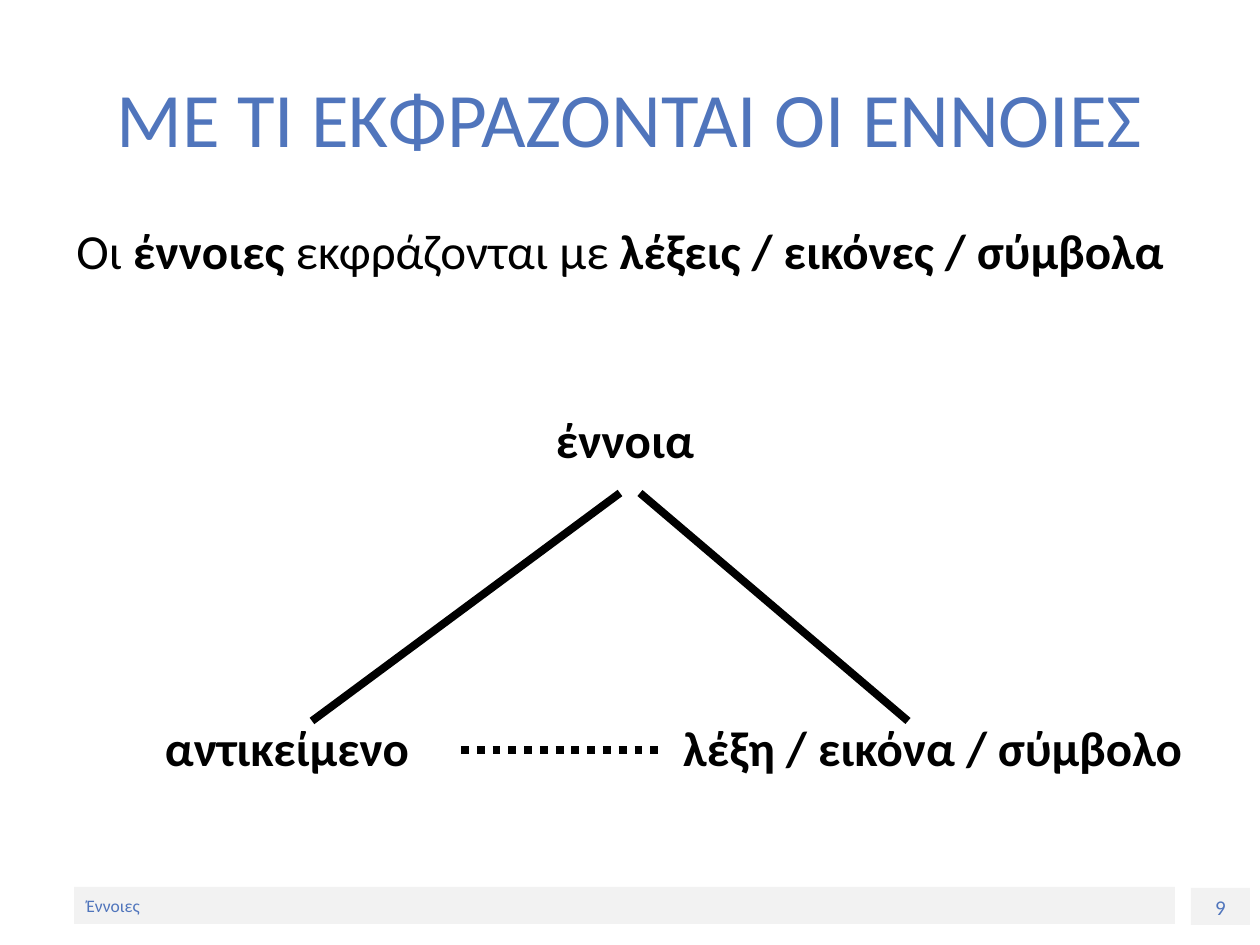
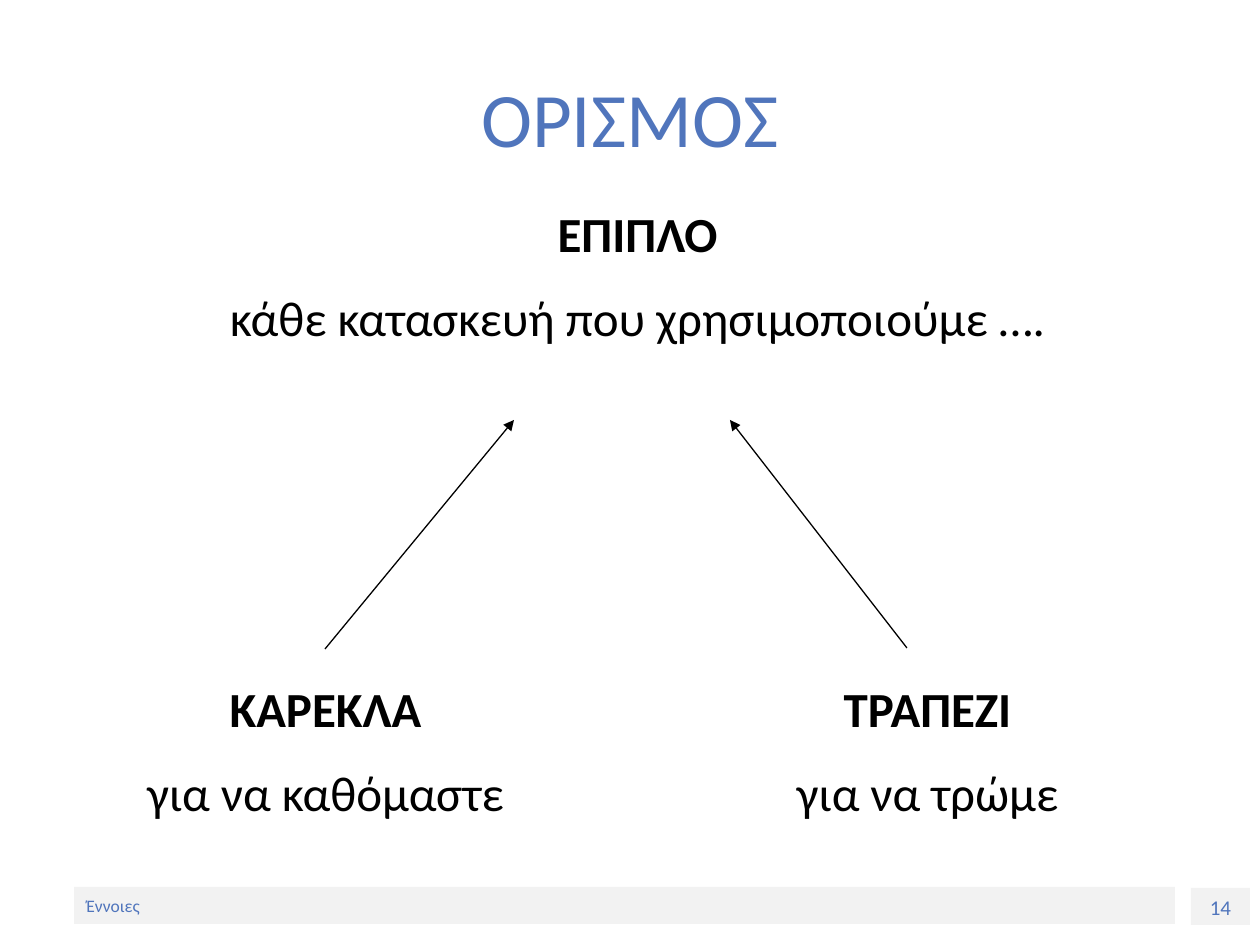
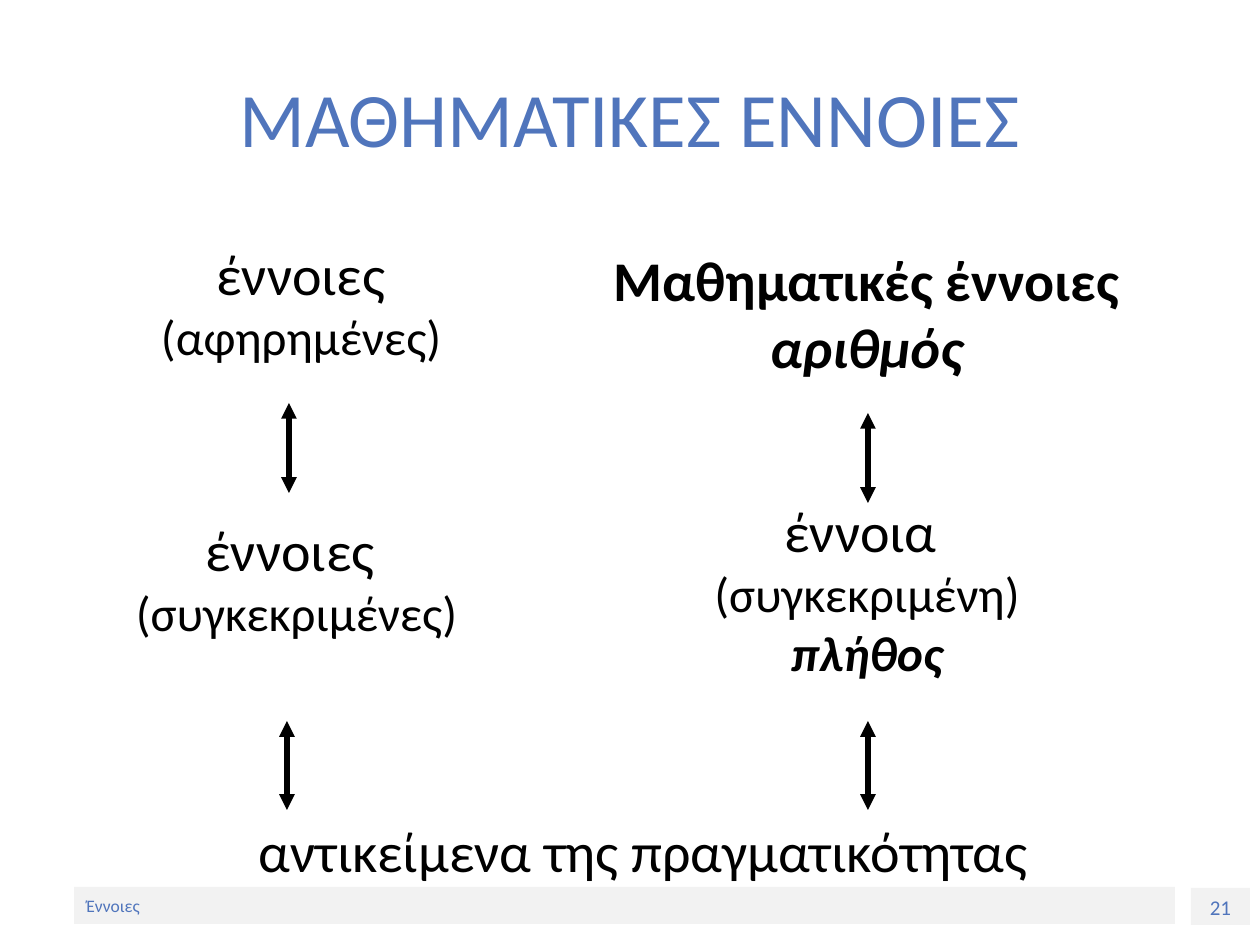
from lxml import etree
from pptx import Presentation
from pptx.dml.color import RGBColor
from pptx.enum import dml, shapes, text
from pptx.oxml import ns
from pptx import util as u

rgb = RGBColor.from_string
BLUE, GREY, BLACK = "5075BC", "F2F2F2", "000000"
CENTER, LEFT = text.PP_ALIGN.CENTER, text.PP_ALIGN.LEFT
TOP, MIDDLE = text.MSO_ANCHOR.TOP, text.MSO_ANCHOR.MIDDLE
BOLD = {"bold": True}
ITALIC = {"bold": True, "italic": True}


def px(n):
    return u.Emu(round(n * 914400 / 126))


def write(sp, paras, size=28, color=BLACK, align=CENTER, anchor=TOP):
    tf = sp.text_frame
    tf.word_wrap = True
    tf.vertical_anchor = anchor
    for i, lines in enumerate(paras):
        p = tf.paragraphs[0] if i == 0 else tf.add_paragraph()
        p.alignment = align
        p.space_before = u.Pt(14 if i else 0)
        for j, line in enumerate(lines):
            if j:
                p.add_line_break()
            for words, fmt in line:
                r = p.add_run()
                r.text = words
                r.font.color.rgb = rgb(color)
                values = {"name": "Calibri", "size": size, "bold": False} | fmt
                values["size"] = u.Pt(values["size"])
                for key, value in values.items():
                    setattr(r.font, key, value)


big = {"size": 32}
slides = [
    {
        "number": "9",
        "title": "ΜΕ ΤΙ ΕΚΦΡΑΖΟΝΤΑΙ ΟΙ ΕΝΝΟΙΕΣ",
        "anchor": TOP,
        "texts": [
            ((64, 214, 1134, 624), LEFT, [[[
                ("Οι ", {}), ("έννοιες", BOLD), (" εκφράζονται με ", {}),
                ("λέξεις / εικόνες / σύμβολα", BOLD)]]]),
            ((461, 403, 328, 72), CENTER, [[[("έννοια", BOLD)]]]),
            ((630, 711, 605, 72), CENTER, [[[("λέξη / εικόνα / σύμβολο", BOLD)]]]),
            ((123, 711, 328, 72), CENTER, [[[("αντικείμενο", BOLD)]]]),
        ],
        "width": 4.5,
        "ends": [],
        "lines": [
            ((620, 493, 312, 721), None),
            ((640, 493, 908, 721), None),
            ((461, 750, 660, 750), dml.MSO_LINE.ROUND_DOT),
        ],
    },
    {
        "number": "14",
        "title": "ΟΡΙΣΜΟΣ",
        "anchor": MIDDLE,
        "texts": [
            ((67, 670, 517, 160), CENTER, [[[("ΚΑΡΕΚΛΑ", BOLD)]], [[("για να καθόμαστε", {})]]]),
            ((146, 195, 983, 160), CENTER, [
                [[("ΕΠΙΠΛΟ", BOLD)]], [[("κάθε κατασκευή που χρησιμοποιούμε ….", {})]]]),
            ((669, 670, 517, 160), CENTER, [[[("ΤΡΑΠΕΖΙ", BOLD)]], [[("για να τρώμε", {})]]]),
        ],
        "width": 0.75,
        "ends": ["tailEnd"],
        "lines": [((325, 649, 514, 420), None), ((907, 648, 730, 420), None)],
    },
    {
        "number": "21",
        "title": "ΜΑΘΗΜΑΤΙΚΕΣ ΕΝΝΟΙΕΣ",
        "anchor": TOP,
        "texts": [
            ((88, 810, 1111, 81), CENTER, [[[("αντικείμενα της πραγματικότητας", big)]]]),
            ((98, 509, 397, 140), CENTER, [[[("έννοιες ", big)], [("(συγκεκριμένες)", {})]]]),
            ((78, 233, 446, 140), CENTER, [[[("έννοιες", big)], [("(αφηρημένες)", {})]]]),
            ((544, 239, 645, 149), CENTER, [[
                [("Μαθηματικές έννοιες", big | BOLD)], [("αριθμός", big | ITALIC)]]]),
            ((629, 490, 476, 199), CENTER, [[
                [("έννοια ", big)], [("(συγκεκριμένη)", {})], [("πλήθος", ITALIC)]]]),
        ],
        "width": 3,
        "ends": ["headEnd", "tailEnd"],
        "lines": [
            ((289, 493, 289, 403), None),
            ((287, 810, 287, 721), None),
            ((868, 503, 868, 413), None),
            ((868, 810, 868, 721), None),
        ],
    },
]

prs = Presentation()
prs.slide_width, prs.slide_height = px(1260), px(945)

for content in slides:
    s = prs.slides.add_slide(prs.slide_layouts[6])

    for at, words, size, align, anchor in [
        ((1191, 888, 59, 37), content["number"], 12, CENTER, TOP),
        ((74, 887, 1101, 37), "Έννοιες", 10, LEFT, MIDDLE),
    ]:
        sp = s.shapes.add_shape(shapes.MSO_SHAPE.RECTANGLE, *map(px, at))
        sp.shadow.inherit = False
        sp.fill.solid()
        sp.fill.fore_color.rgb = rgb(GREY)
        sp.line.fill.background()
        write(sp, [[[(words, {})]]], size, BLUE, align, anchor)

    sp = s.shapes.add_textbox(*map(px, (63, 38, 1134, 157)))
    write(sp, [[[(content["title"], {})]]], 44, BLUE, CENTER, MIDDLE)

    for at, align, paras in content["texts"]:
        sp = s.shapes.add_textbox(*map(px, at))
        write(sp, paras, align=align, anchor=content["anchor"])

    for ends, dash in content["lines"]:
        c = s.shapes.add_connector(shapes.MSO_CONNECTOR.STRAIGHT, *map(px, ends))
        c.line.color.rgb = rgb(BLACK)
        c.line.width = u.Pt(content["width"])
        if dash:
            c.line.dash_style = dash
        for end in content["ends"]:
            etree.SubElement(c.line._get_or_add_ln(), ns.qn("a:" + end), type="triangle")
        etree.SubElement(c._element.spPr, ns.qn("a:effectLst"))

prs.save("out.pptx")
